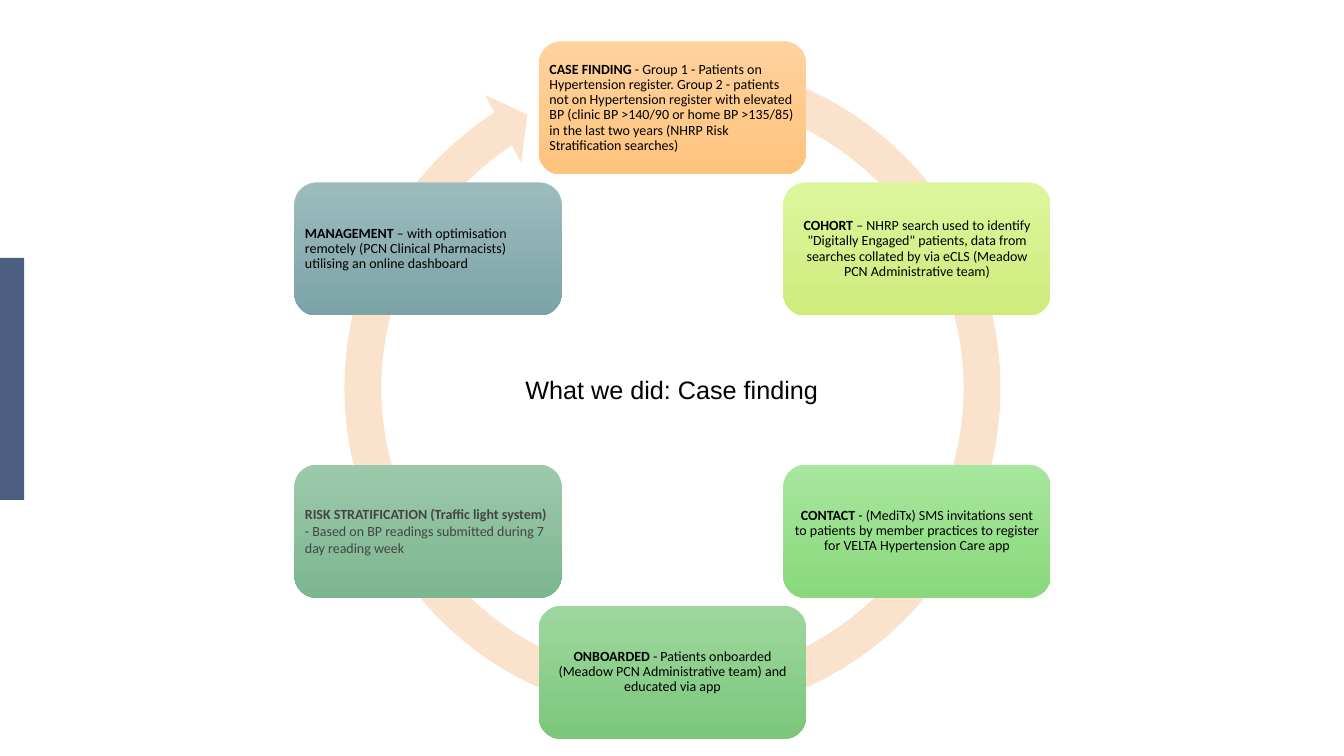
"""Build a slide showing the case finding cycle as six boxes around an arrow."""
from math import cos, radians, sin

from pptx import Presentation
from pptx.dml.color import RGBColor
from pptx.enum.shapes import MSO_SHAPE
from pptx.enum.text import MSO_ANCHOR, MSO_AUTO_SIZE, PP_ALIGN
from pptx.util import Inches, Pt

RECT, ROUND, RING = MSO_SHAPE.RECTANGLE, MSO_SHAPE.ROUNDED_RECTANGLE, MSO_SHAPE.CIRCULAR_ARROW
LEFT, CENTER = PP_ALIGN.LEFT, PP_ALIGN.CENTER
MIDDLE, TOP = MSO_ANCHOR.MIDDLE, MSO_ANCHOR.TOP
NO_FIT = MSO_AUTO_SIZE.NONE

COLORS = {
    "bar": "4D5F80", "ring": "FAE2CC", "text": "000000", "muted": "444444",
    "orange": ("FFD29E", "FEC37C"), "lime": ("DDF69D", "CEEB7C"),
    "green": ("A7E69D", "89D97C"), "leaf": ("9DD79E", "7CC77C"),
    "sage": ("9DC9AB", "7CB68F"), "teal": ("9DBBBD", "7CA4A7"),
}
TITLE_FONT = {"name": "Arial", "size": Pt(18), "bold": False}
BOX_FONT = {"name": "Calibri", "size": Pt(10)}
BOX_FRAME = {"word_wrap": True, "auto_size": NO_FIT, "vertical_anchor": MIDDLE,
             **{f"margin_{side}": Inches(0.04) for side in ("left", "top", "right", "bottom")}}
TITLE_FRAME = {"word_wrap": True, "auto_size": NO_FIT, "vertical_anchor": TOP}

CENTER_X, CENTER_Y, RADIUS = 6.67, 3.87, 2.8
BOX_W, BOX_H = 2.65, 1.32
RING_SIZE = 6.9
RING_PERCENTS = (5.3, 312.6, 14210.9, 17137.1, 5.5)

STEPS = [
    ("CASE FINDING", " - Group 1 - Patients on Hypertension register. Group 2 - patients not on "
     "Hypertension register with elevated BP (clinic BP >140/90 or home BP >135/85) in the last "
     "two years (NHRP Risk Stratification searches)", "orange", "text", LEFT, 0.9),
    ("COHORT", " – NHRP search used to identify \"Digitally Engaged\" patients, data from searches "
     "collated by via eCLS (Meadow PCN Administrative team)", "lime", "text", CENTER, 0.9),
    ("CONTACT", " - (MediTx) SMS invitations sent to patients by member practices to register "
     "for VELTA Hypertension Care app", "green", "text", CENTER, 0.9),
    ("ONBOARDED", " - Patients onboarded (Meadow PCN Administrative team) and educated via app",
     "leaf", "text", CENTER, 0.9),
    ("RISK STRATIFICATION (Traffic light system)",
     " - Based on BP readings submitted during 7 day reading week", "sage", "muted", LEFT, 1.0),
    ("MANAGEMENT", " – with optimisation remotely (PCN Clinical Pharmacists) utilising an online "
     "dashboard", "teal", "text", LEFT, 0.9),
]


def apply(obj, values):
    """Set each named attribute on the object."""
    for name, value in values.items():
        setattr(obj, name, value)


class CycleSlide:
    """Hold the slide and draw its elements in one style."""

    def __init__(self, prs):
        """Add a title-only slide to the presentation."""
        self.s = prs.slides.add_slide(prs.slide_layouts[5])

    def color(self, name):
        """Return the named colour."""
        return RGBColor.from_string(COLORS[name])

    def shape(self, kind, x, y, w, h, fill):
        """Add a preset shape with a plain or a gradient fill."""
        sp = self.s.shapes.add_shape(kind, Inches(x), Inches(y), Inches(w), Inches(h))
        sp.shadow.inherit = False
        sp.line.fill.background()
        if isinstance(COLORS[fill], tuple):
            sp.fill.gradient()
            sp.fill.gradient_angle = 270
            for stop, value in zip(sp.fill.gradient_stops, COLORS[fill]):
                stop.color.rgb = RGBColor.from_string(value)
        else:
            sp.fill.solid()
            sp.fill.fore_color.rgb = self.color(fill)
        return sp

    def run(self, p, text, color, font):
        """Add a formatted run to the paragraph."""
        r = p.add_run()
        r.text = text
        apply(r.font, font)
        r.font.color.rgb = self.color(color)

    def title(self, text, x, y, w, h):
        """Place and format the title placeholder."""
        sp = self.s.shapes.title
        apply(sp, {"left": Inches(x), "top": Inches(y), "width": Inches(w), "height": Inches(h)})
        apply(sp.text_frame, TITLE_FRAME)
        p = sp.text_frame.paragraphs[0]
        p.alignment = LEFT
        self.run(p, text, "text", TITLE_FONT)

    def ring(self):
        """Add the circular arrow behind the boxes."""
        sp = self.shape(RING, CENTER_X - RING_SIZE / 2, CENTER_Y - 0.02 - RING_SIZE / 2,
                        RING_SIZE, RING_SIZE, "ring")
        for i, percent in enumerate(RING_PERCENTS):
            sp.adjustments[i] = percent / 100

    def step(self, angle, heading, detail, fill, color, align, spacing):
        """Add a box at a clockwise angle from the top of the ring."""
        x = CENTER_X + RADIUS * sin(radians(angle)) - BOX_W / 2
        y = CENTER_Y - RADIUS * cos(radians(angle)) - BOX_H / 2
        tf = self.shape(ROUND, x, y, BOX_W, BOX_H, fill).text_frame
        apply(tf, BOX_FRAME)
        p = tf.paragraphs[0]
        apply(p, {"alignment": align, "line_spacing": spacing})
        self.run(p, heading, color, {**BOX_FONT, "bold": True})
        self.run(p, detail, color, {**BOX_FONT, "bold": False})


def main():
    """Build and save the presentation."""
    prs = Presentation()
    apply(prs, {"slide_width": Inches(13.33), "slide_height": Inches(7.5)})
    slide = CycleSlide(prs)
    slide.shape(RECT, 0, 2.56, 0.24, 2.4, "bar")
    slide.ring()
    for i, step in enumerate(STEPS):
        slide.step(i * 360 / len(STEPS), *step)
    slide.title("What we did: Case finding", 5.11, 3.66, 3.39, 0.4)
    prs.save("out.pptx")


if __name__ == "__main__":
    main()
